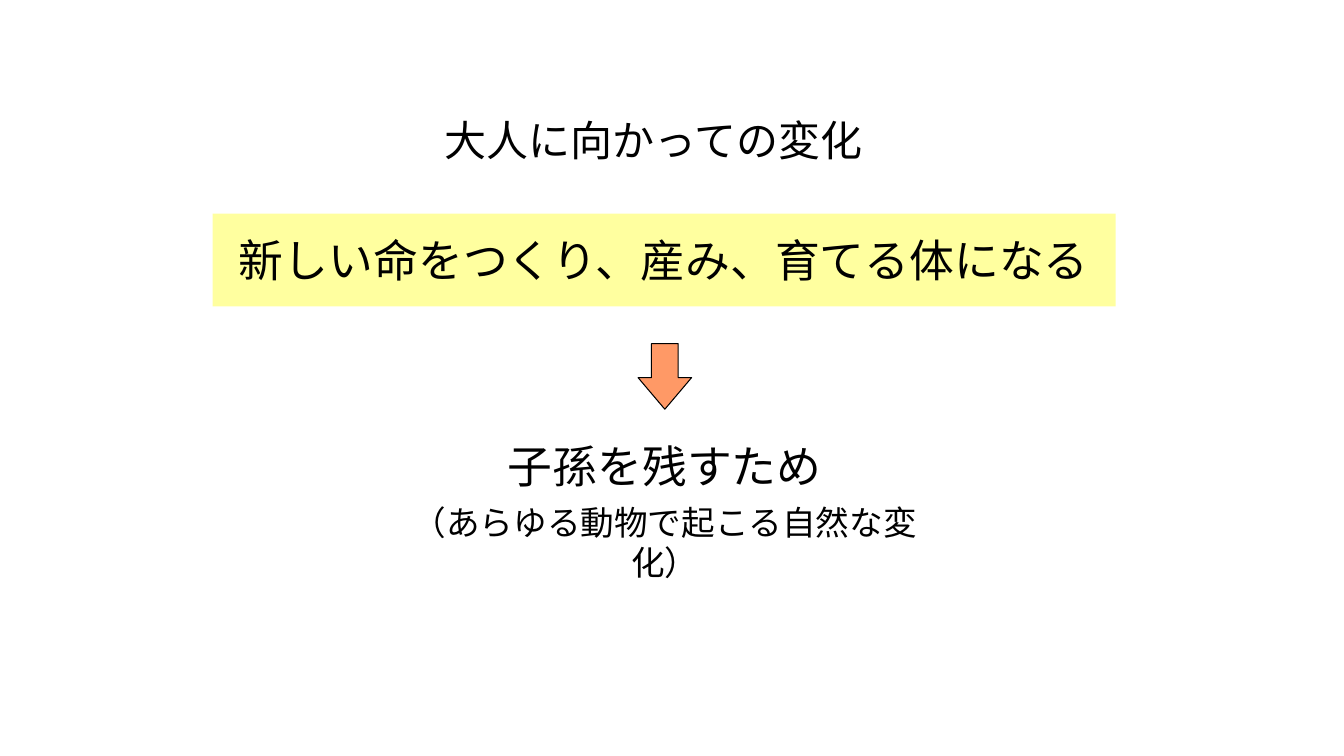
from dataclasses import dataclass

from lxml import etree
from pptx import Presentation
from pptx.dml.color import RGBColor
from pptx.enum import shapes, text
from pptx.oxml import ns
from pptx.util import Pt

FONT = "Noto Sans CJK JP"
HUES = {"ink": "000000", "band": "FFFF9F", "arrow": "FF9966"}


@dataclass
class Label:
    words: str
    box: tuple[float, float, float, float]
    size: float
    fill: str = ""


TITLE = Label("大人に向かっての変化", (310.3, 68.4, 329, 67.7), 30)
LABELS = [
    Label("子孫を残すため", (348.5, 309.6, 252.7, 46.1), 32),
    Label("新しい命をつくり、産み、育てる体になる", (151.9, 152.6, 645.1, 66.2), 32, "band"),
    Label("（あらゆる動物で起こる自然な変化）", (285.1, 369.4, 379.4, 36), 24),
]
ARROW = (455.8, 245.5, 38.2, 46.8)


def hue(key: str) -> RGBColor:
    return RGBColor.from_string(HUES[key])


def put(obj: object, values: dict) -> None:
    for key, value in values.items():
        setattr(obj, key, value)


def write(shape, label: Label, align) -> None:
    frame = shape.text_frame
    put(frame, {"word_wrap": True, "auto_size": text.MSO_AUTO_SIZE.NONE,
                "vertical_anchor": text.MSO_ANCHOR.MIDDLE})
    para = frame.paragraphs[0]
    para.alignment = align
    run = para.add_run()
    run.text = label.words
    put(run.font, {"name": FONT, "size": Pt(label.size), "bold": False})
    run.font.color.rgb = hue("ink")
    # East Asian typeface
    face = etree.SubElement(run.font._element, ns.qn("a:ea"))
    face.set("typeface", FONT)


def draw(slide, label: Label) -> None:
    box = [Pt(n) for n in label.box]
    if label.fill:
        shape = slide.shapes.add_shape(shapes.MSO_SHAPE.RECTANGLE, *box)
        shape.shadow.inherit = False
        shape.fill.solid()
        shape.fill.fore_color.rgb = hue(label.fill)
        shape.line.fill.background()
    else:
        shape = slide.shapes.add_textbox(*box)
    write(shape, label, text.PP_ALIGN.CENTER)


def main() -> None:
    deck = Presentation()
    put(deck, {"slide_width": Pt(960), "slide_height": Pt(540)})
    slide = deck.slides.add_slide(deck.slide_layouts[5])

    # Title
    title = slide.shapes.title
    put(title, dict(zip(("left", "top", "width", "height"), map(Pt, TITLE.box))))
    write(title, TITLE, text.PP_ALIGN.LEFT)
    title.text_frame.paragraphs[0].line_spacing = 0.9

    # Statements
    for label in LABELS:
        draw(slide, label)

    # Arrow from the change to its purpose
    arrow = slide.shapes.add_shape(shapes.MSO_SHAPE.DOWN_ARROW, *map(Pt, ARROW))
    arrow.shadow.inherit = False
    arrow.adjustments[0] = 0.5
    arrow.adjustments[1] = 0.59
    arrow.fill.solid()
    arrow.fill.fore_color.rgb = hue("arrow")
    arrow.line.color.rgb = hue("ink")
    arrow.line.width = Pt(0.75)

    deck.save("out.pptx")


if __name__ == "__main__":
    main()
